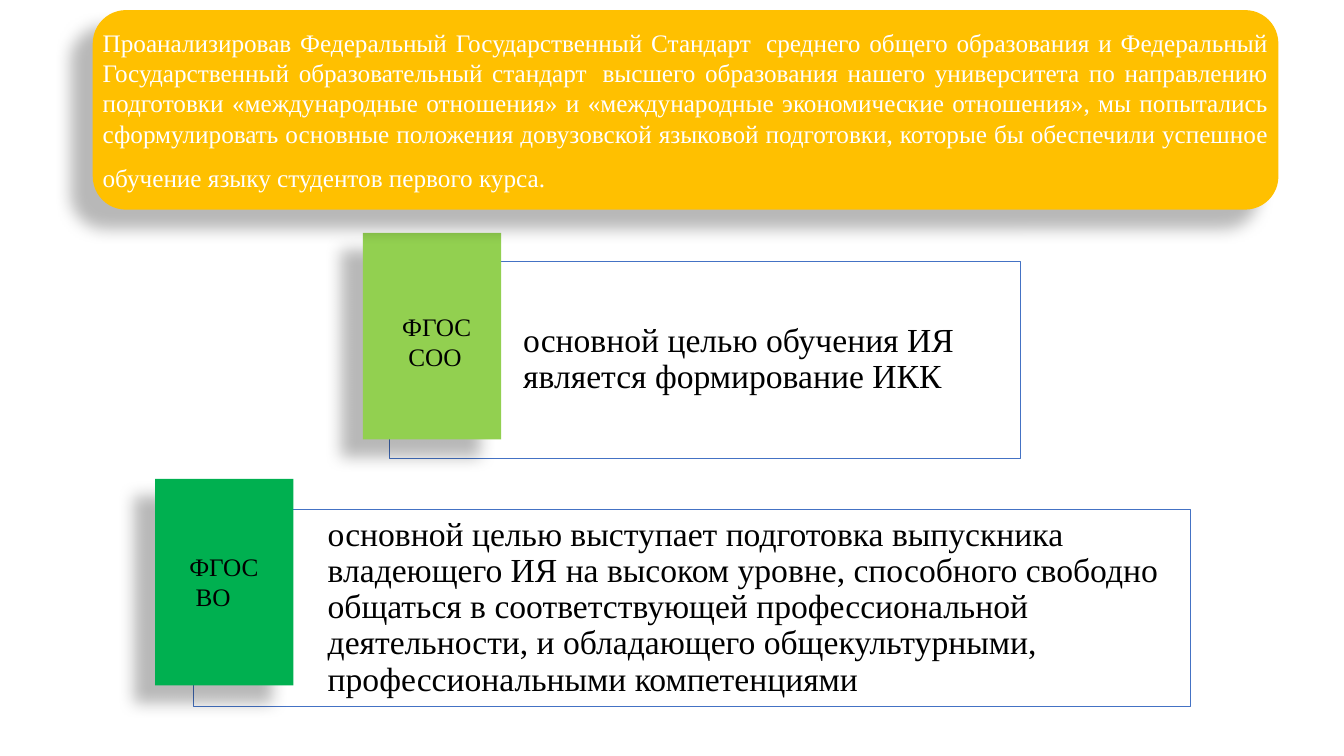
from dataclasses import dataclass

from lxml.etree import SubElement
from pptx import Presentation
from pptx.dml.color import RGBColor
from pptx.enum.shapes import MSO_SHAPE
from pptx.enum.text import MSO_ANCHOR, PP_ALIGN
from pptx.oxml.ns import qn
from pptx.shapes.autoshape import Shape
from pptx.slide import Slide
from pptx.text.text import Font
from pptx.util import Inches, Pt

FONT = "Times New Roman"
CARD_HEIGHT = 1.96
TAB_WIDTH, TAB_HEIGHT = 1.37, 2.05
LABEL_WIDTH, LABEL_HEIGHT = 0.93, 0.71

Box = tuple[float, float, float, float]


@dataclass(frozen=True)
class Standard:
    label: tuple[str, str]
    goal: str
    color: str
    card_at: tuple[float, float]
    card_width: float
    tab_at: tuple[float, float]
    label_at: tuple[float, float]


STANDARDS = [
    Standard(
        ("ФГОС", " СОО"),
        "основной целью обучения ИЯ является формирование ИКК",
        "92D050", (3.86, 2.59), 6.26, (3.6, 2.31), (3.89, 3.04),
    ),
    Standard(
        ("ФГОС", " ВО"),
        "основной целью выступает подготовка выпускника владеющего ИЯ на высоком уровне, "
        "способного свободно общаться в соответствующей профессиональной деятельности, "
        "и обладающего общекультурными, профессиональными компетенциями",
        "00B050", (1.92, 5.05), 9.89, (1.54, 4.75), (1.78, 5.42),
    ),
]

INTRO = (
    "Проанализировав Федеральный Государственный Стандарт\u00a0 среднего общего образования "
    "и Федеральный Государственный образовательный стандарт\u00a0 высшего образования "
    "нашего университета по направлению подготовки «международные отношения» и "
    "«международные экономические отношения», мы попытались сформулировать основные "
    "положения довузовской языковой подготовки, которые бы обеспечили успешное обучение "
    "языку студентов первого курса."
)


def rgb(color: str) -> RGBColor:
    return RGBColor.from_string(color)


def set_font(font: Font, size: float, color: str = "000000") -> None:
    font.name = FONT
    font.size = Pt(size)
    font.color.rgb = rgb(color)


def add_block(slide: Slide, kind: MSO_SHAPE, box: Box, color: str) -> Shape:
    block = slide.shapes.add_shape(kind, *map(Inches, box))
    block.shadow.inherit = False
    block.fill.solid()
    block.fill.fore_color.rgb = rgb(color)
    block.line.fill.background()
    return block


def cast_shadow(block: Shape) -> None:
    """Add a soft shadow falling to the lower left."""
    effects = block.element.spPr.find(qn("a:effectLst"))
    shadow = SubElement(
        effects, qn("a:outerShdw"), blurRad=str(Pt(11.8)), dist=str(Pt(19.7)),
        dir=str(141 * 60000), algn="ctr", rotWithShape="0",
    )
    color = SubElement(shadow, qn("a:srgbClr"), val="000000")
    SubElement(color, qn("a:alpha"), val="28000")


def add_goal_card(slide: Slide, standard: Standard) -> None:
    box = (*standard.card_at, standard.card_width, CARD_HEIGHT)
    card = add_block(slide, MSO_SHAPE.RECTANGLE, box, "FFFFFF")
    fill_color = card.element.spPr.find(qn("a:solidFill")).find(qn("a:srgbClr"))
    SubElement(fill_color, qn("a:alpha"), val="40000")
    card.line.color.rgb = rgb("4472C4")
    card.line.width = Pt(0.5)

    frame = card.text_frame
    frame.word_wrap = True
    frame.vertical_anchor = MSO_ANCHOR.MIDDLE
    frame.margin_left = Inches(1.33)
    frame.margin_top = frame.margin_right = frame.margin_bottom = Inches(0.1)
    goal = frame.paragraphs[0]
    goal.text = standard.goal
    goal.alignment = PP_ALIGN.LEFT
    goal.line_spacing = 0.9
    set_font(goal.font, 24)


def add_tab(slide: Slide, standard: Standard) -> None:
    box = (*standard.tab_at, TAB_WIDTH, TAB_HEIGHT)
    cast_shadow(add_block(slide, MSO_SHAPE.RECTANGLE, box, standard.color))
    label_box = (*standard.label_at, LABEL_WIDTH, LABEL_HEIGHT)
    frame = slide.shapes.add_textbox(*map(Inches, label_box)).text_frame
    frame.word_wrap = True
    frame.text = "\n".join(standard.label)
    for line in frame.paragraphs:
        set_font(line.font, 18)


def add_intro(slide: Slide) -> None:
    left, width = 0.92, 11.76
    banner = add_block(slide, MSO_SHAPE.ROUNDED_RECTANGLE, (left, 0.1, width, 1.98), "FFC000")
    cast_shadow(banner)
    frame = slide.shapes.add_textbox(*map(Inches, (left, 0.22, width, 1.86))).text_frame
    frame.word_wrap = True
    intro = frame.paragraphs[0]
    intro.alignment = PP_ALIGN.JUSTIFY
    intro.space_before = Pt(10)
    set_font(intro.font, 18, "FFFFFF")
    intro.add_run().text = INTRO
    closing_space = intro.add_run()
    closing_space.text = "\u00a0"
    set_font(closing_space.font, 28, "FFFFFF")


def main() -> None:
    presentation = Presentation()
    presentation.slide_width = Inches(13.33)
    presentation.slide_height = Inches(7.5)
    slide = presentation.slides.add_slide(presentation.slide_layouts[6])
    for standard in STANDARDS:
        add_goal_card(slide, standard)
        add_tab(slide, standard)
    add_intro(slide)
    presentation.save("out.pptx")


if __name__ == "__main__":
    main()
